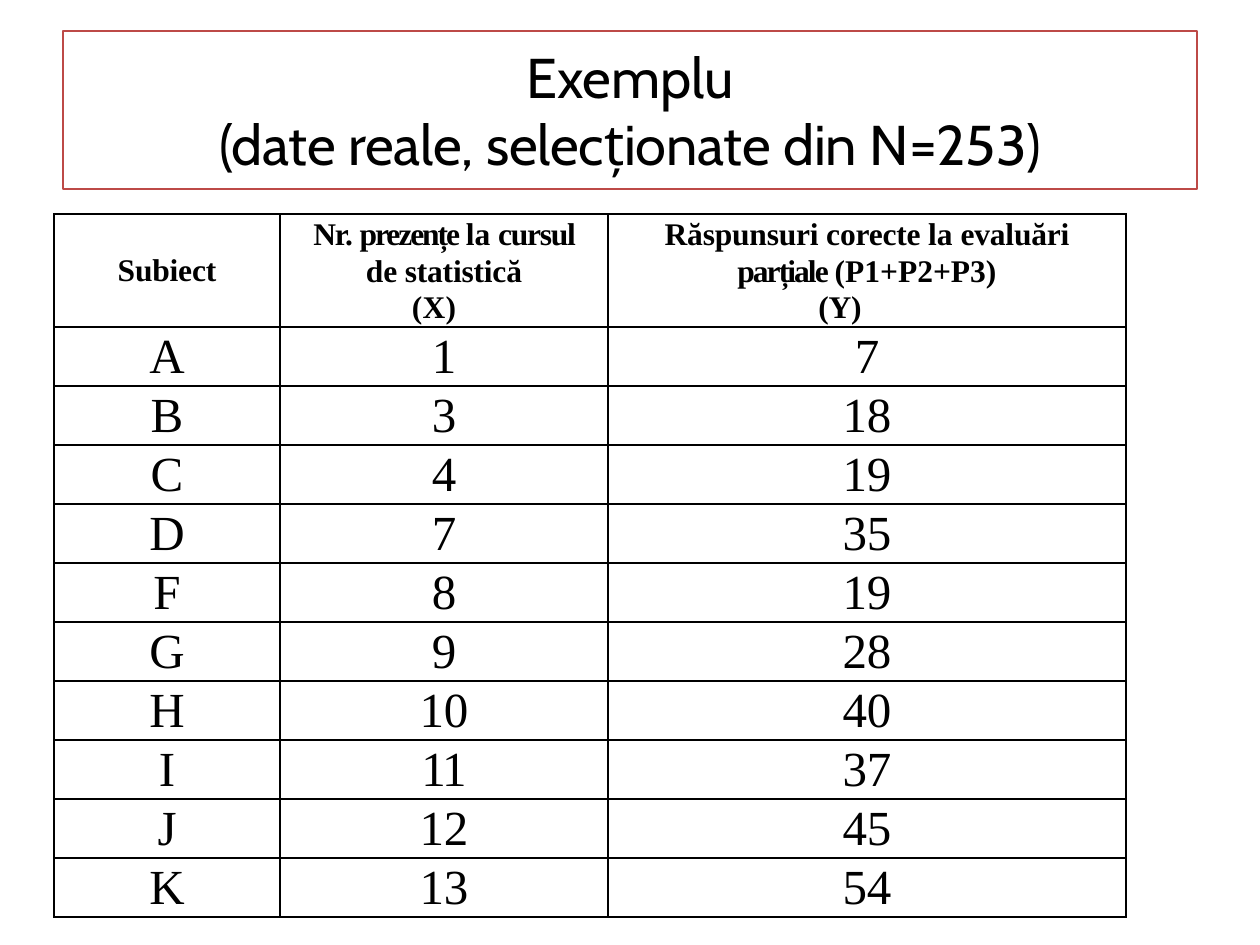
from dataclasses import dataclass
from typing import Any, Sequence

from lxml.etree import SubElement
from pptx import Presentation
from pptx.dml.color import RGBColor
from pptx.enum.shapes import MSO_SHAPE as Shape
from pptx.enum.text import MSO_ANCHOR as Anchor, PP_ALIGN as Align
from pptx.oxml.ns import qn
from pptx.util import Emu, Pt

PX = 914400 / 126
BLACK = RGBColor(0x00, 0x00, 0x00)
TITLE_RED = RGBColor(0xBD, 0x4A, 0x47)
SERIF = "Times New Roman"
TITLE_FONT = dict(name="Cabin", size=Pt(32), bold=False)
HEADING_FONT = dict(name=SERIF, size=Pt(18), bold=True)
VALUE_FONT = dict(name=SERIF, size=Pt(28), bold=False)
COLUMN_WIDTHS = (226, 328, 518)
HEADING_HEIGHT, ROW_HEIGHT = 113, 59


@dataclass(frozen=True)
class Phrase:
    text: str
    tracking: int = 0


@dataclass(frozen=True)
class Line:
    phrases: Sequence[Phrase]
    spacing: float | None = None
    left: int = 0
    right: int = 0


def px(length: int) -> Emu:
    """Turn pixels into EMU."""
    return Emu(round(length * PX))


def apply(target: Any, values: dict[str, Any]) -> None:
    """Set each named attribute on the target."""
    for name, value in values.items():
        setattr(target, name, value)


def write(frame: Any, lines: Sequence[Line], font: dict[str, Any]) -> None:
    """Write centred lines into a text frame."""
    for index, line in enumerate(lines):
        paragraph = frame.add_paragraph() if index else frame.paragraphs[0]
        properties = paragraph._p.get_or_add_pPr()
        properties.set("marL", str(px(line.left)))
        properties.set("marR", str(px(line.right)))
        paragraph.alignment = Align.CENTER
        if line.spacing:
            paragraph.line_spacing = Pt(line.spacing)
        for phrase in line.phrases:
            run = paragraph.add_run()
            run.text = phrase.text
            apply(run.font, font)
            run.font.color.rgb = BLACK
            run._r.get_or_add_rPr().set("spc", str(phrase.tracking))


def draw_borders(cell: Any) -> None:
    """Give a cell a thin black line on every side."""
    properties = cell._tc.get_or_add_tcPr()
    for position, side in enumerate(("lnL", "lnR", "lnT", "lnB")):
        border = SubElement(properties, qn(f"a:{side}"), w=str(Pt(1)))
        properties.insert(position, border)
        fill = SubElement(border, qn("a:solidFill"))
        SubElement(fill, qn("a:srgbClr"), val=str(BLACK))


def fill_cell(cell: Any, lines: Sequence[Line], font: dict[str, Any], anchor: Any) -> None:
    """Format one table cell and write its lines."""
    margins = dict.fromkeys(("margin_left", "margin_top", "margin_right", "margin_bottom"), 0)
    apply(cell, margins | dict(vertical_anchor=anchor))
    cell.fill.background()
    draw_borders(cell)
    write(cell.text_frame, lines, font)


def value(text: str, tracking: int = 0) -> list[Line]:
    """Make the single line of a value cell."""
    return [Line([Phrase(text, tracking)], 32.6)]


def heading(phrases: Sequence[Phrase], symbol: Phrase, indent: int) -> list[Line]:
    """Make a column heading with its variable symbol below."""
    return [Line(phrases, 21.6, indent, indent), Line([symbol], 20.4, 0, indent)]


HEADINGS = (
    [Line([Phrase("Subiect", -10)])],
    heading(
        [Phrase("Nr. ", -60), Phrase("prezențe ", -120), Phrase("la "),
         Phrase("cursul ", -70), Phrase("de statistică", -10)],
        Phrase("(X)", 10), 20,
    ),
    heading(
        [Phrase("Răspunsuri corecte ", -10), Phrase("la "), Phrase("evaluări ", -10),
         Phrase("parțiale ", -110), Phrase("(P1+P2+P3)")],
        Phrase("(Y)", -10), 54,
    ),
)
RESULTS = (
    ("A", 1, 7), ("B", 3, 18), ("C", 4, 19), ("D", 7, 35), ("F", 8, 19),
    ("G", 9, 28), ("H", 10, 40), ("I", 11, 37), ("J", 12, 45), ("K", 13, 54),
)
TIGHT = {"11": -110}


def add_results(slide: Any) -> None:
    """Add the table of attendance and correct answers."""
    height = HEADING_HEIGHT + ROW_HEIGHT * len(RESULTS)
    table = slide.shapes.add_table(
        len(RESULTS) + 1, len(COLUMN_WIDTHS),
        px(54), px(214), px(sum(COLUMN_WIDTHS)), px(height),
    ).table
    apply(table, dict(first_row=False, horz_banding=False))
    for column, width in zip(table.columns, COLUMN_WIDTHS):
        column.width = px(width)
    for index, row in enumerate(table.rows):
        row.height = px(ROW_HEIGHT if index else HEADING_HEIGHT)
    for column, lines in enumerate(HEADINGS):
        anchor = Anchor.TOP if column else Anchor.MIDDLE
        fill_cell(table.cell(0, column), lines, HEADING_FONT, anchor)
    for row, result in enumerate(RESULTS, start=1):
        for column, entry in enumerate(map(str, result)):
            lines = value(entry, TIGHT.get(entry, 0))
            fill_cell(table.cell(row, column), lines, VALUE_FONT, Anchor.TOP)


def add_title(slide: Any) -> None:
    """Add the framed title."""
    title = slide.shapes.add_shape(Shape.RECTANGLE, px(63), px(31), px(1134), px(158))
    title.shadow.inherit = False
    title.fill.background()
    title.line.color.rgb = TITLE_RED
    title.line.width = Pt(0.72)
    apply(title.text_frame, dict(
        word_wrap=True, vertical_anchor=Anchor.TOP,
        margin_left=0, margin_top=px(11), margin_right=0, margin_bottom=0,
    ))
    write(title.text_frame, [
        Line([Phrase("Exemplu", -10)]),
        Line([Phrase("(date reale, selecționate din ", -10), Phrase("N=253)")]),
    ], TITLE_FONT)


def main() -> None:
    """Build and save the slide."""
    deck = Presentation()
    apply(deck, dict(slide_width=px(1260), slide_height=px(945)))
    slide = deck.slides.add_slide(deck.slide_layouts[6])
    add_results(slide)
    add_title(slide)
    deck.save("out.pptx")


if __name__ == "__main__":
    main()
